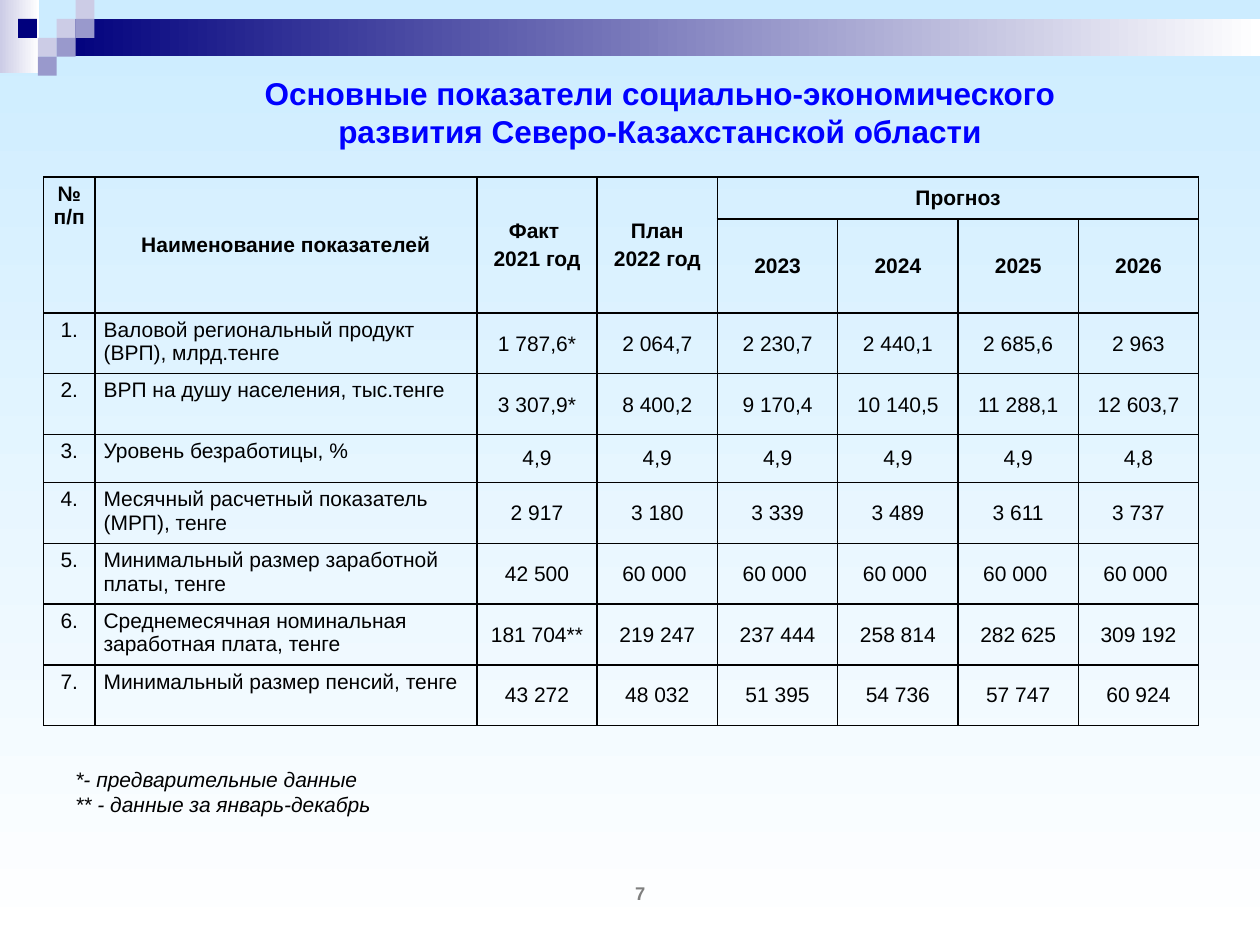
from dataclasses import dataclass
from typing import NamedTuple

from lxml.etree import SubElement
from pptx import Presentation
from pptx.dml.color import RGBColor
from pptx.enum.shapes import MSO_SHAPE
from pptx.enum.text import MSO_ANCHOR, MSO_AUTO_SIZE, PP_ALIGN
from pptx.oxml.ns import qn
from pptx.util import Pt

FONT = "Arial"
BLACK = "000000"
NAVY, LILAC, VIOLET, WHITE = "00007D", "CCCCE6", "9999CC", "FFFFFF"
COLUMNS = [29.2, 218.3] + [68.75] * 6
ROWS = [24, 53.7, 34.7, 34.7, 27.6, 34.7, 34.7, 34.7, 34.7]


class Insets(NamedTuple):
    side: float
    top: float
    bottom: float


NUMBER = Insets(5, 2.9, 2.9)
TIGHT = Insets(0.7, 0.7, 0)
FLAT = Insets(2.9, 0, 0)
WIDE = Insets(5.76, 2.9, 2.9)


class Box(NamedTuple):
    left: float
    top: float
    width: float
    height: float


@dataclass
class Block:
    box: Box
    colors: tuple[str, ...]


@dataclass
class Style:
    size: float = 12
    color: str = BLACK
    bold: bool = False
    italic: bool = False
    align: PP_ALIGN = PP_ALIGN.CENTER
    before: float = 0


@dataclass
class Header:
    text: str
    row: int
    col: int
    last_row: int
    last_col: int
    anchor: MSO_ANCHOR = MSO_ANCHOR.MIDDLE


@dataclass
class Indicator:
    name: str
    values: list[str]
    insets: Insets
    before: float = 0


def tile(left: float, top: float, color: str) -> Block:
    return Block(Box(left, top, 10.8, 10.8), (color,))


BLOCKS = [
    Block(Box(0, 0, 22.3, 41.8), (LILAC, WHITE)),
    Block(Box(32.4, 10.8, 687.6, 21.2), (NAVY, WHITE)),
    tile(32.4, 10.8, LILAC),
    tile(43.2, 0, LILAC),
    tile(43.2, 10.8, VIOLET),
    tile(21.6, 21.6, LILAC),
    tile(10.3, 10.8, NAVY),
    tile(32.4, 21.6, VIOLET),
    tile(21.6, 32.4, VIOLET),
]

HEADERS = [
    Header("№ п/п", 0, 0, 1, 0, MSO_ANCHOR.TOP),
    Header("Наименование показателей", 0, 1, 1, 1),
    Header("Факт \n2021 год", 0, 2, 1, 2),
    Header("План\n2022 год", 0, 3, 1, 3),
    Header("Прогноз", 0, 4, 0, 7),
] + [Header(str(2023 + i), 1, 4 + i, 1, 4 + i) for i in range(4)]

INDICATORS = [
    Indicator("Валовой региональный продукт (ВРП), млрд.тенге",
              ["1 787,6*", "2 064,7", "2 230,7", "2 440,1", "2 685,6", "2 963"], TIGHT),
    Indicator("ВРП на душу населения, тыс.тенге",
              ["3 307,9*", "8 400,2", "9 170,4", "10 140,5", "11 288,1", "12 603,7"], TIGHT),
    Indicator("Уровень безработицы, %", ["4,9"] * 5 + ["4,8"], FLAT),
    Indicator("Месячный расчетный показатель (МРП), тенге",
              ["2 917", "3 180", "3 339", "3 489", "3 611", "3 737"], WIDE, 2.4),
    Indicator("Минимальный размер заработной платы, тенге",
              ["42 500"] + ["60 000 "] * 5, WIDE, 2.4),
    Indicator("Среднемесячная номинальная заработная плата, тенге",
              ["181 704**", "219 247", "237 444", "258 814", "282 625", "309 192"], TIGHT),
    Indicator("Минимальный размер пенсий, тенге",
              ["43 272", "48 032", "51 395", "54 736", "57 747", "60 924"], WIDE, 2.4),
]


def rgb(color: str) -> RGBColor:
    return RGBColor.from_string(color)


def paint(fill, colors: tuple[str, ...], angle: float = 0) -> None:
    if len(colors) == 1:
        fill.solid()
        fill.fore_color.rgb = rgb(colors[0])
        return
    fill.gradient()
    fill.gradient_angle = angle
    for stop, color in zip(fill.gradient_stops, colors):
        stop.color.rgb = rgb(color)


def write(tf, text: str, style: Style) -> None:
    tf.text = text
    for p in tf.paragraphs:
        p.alignment = style.align
        p.space_before = Pt(style.before)
        for r in p.runs:
            r.font.name = FONT
            r.font.size = Pt(style.size)
            r.font.bold = style.bold
            r.font.italic = style.italic
            r.font.color.rgb = rgb(style.color)


def add_block(slide, block: Block) -> None:
    sp = slide.shapes.add_shape(MSO_SHAPE.RECTANGLE, *map(Pt, block.box))
    sp.shadow.inherit = False
    sp.line.fill.background()
    paint(sp.fill, block.colors)


def add_text(slide, box: Box, text: str, style: Style, anchor: MSO_ANCHOR) -> None:
    tf = slide.shapes.add_textbox(*map(Pt, box)).text_frame
    tf.word_wrap = True
    tf.vertical_anchor = anchor
    write(tf, text, style)


def set_title(slide, box: Box, text: str) -> None:
    sp = slide.shapes.title
    sp.left, sp.top, sp.width, sp.height = map(Pt, box)
    tf = sp.text_frame
    tf.word_wrap = True
    tf.auto_size = MSO_AUTO_SIZE.NONE
    tf.vertical_anchor = MSO_ANCHOR.MIDDLE
    write(tf, text, Style(18, "0000FF", bold=True))


def outline(cell) -> None:
    tc_pr = cell._tc.get_or_add_tcPr()
    for side in ("lnL", "lnR", "lnT", "lnB"):
        ln = SubElement(tc_pr, qn(f"a:{side}"), w=str(Pt(1)))
        SubElement(SubElement(ln, qn("a:solidFill")), qn("a:srgbClr"), val=BLACK)
    cell.fill.background()


def fill_cell(cell, text: str, style: Style, insets: Insets, anchor: MSO_ANCHOR) -> None:
    cell.margin_left = cell.margin_right = Pt(insets.side)
    cell.margin_top, cell.margin_bottom = Pt(insets.top), Pt(insets.bottom)
    cell.vertical_anchor = anchor
    write(cell.text_frame, text, style)


def add_indicators(slide, left: float, top: float) -> None:
    box = Box(left, top, sum(COLUMNS), sum(ROWS))
    table = slide.shapes.add_table(len(ROWS), len(COLUMNS), *map(Pt, box)).table
    table.first_row = table.horz_banding = False
    for column, width in zip(table.columns, COLUMNS):
        column.width = Pt(width)
    for row, height in zip(table.rows, ROWS):
        row.height = Pt(height)
    for cell in table.iter_cells():
        outline(cell)
    for h in HEADERS:
        cell = table.cell(h.row, h.col)
        if (h.row, h.col) != (h.last_row, h.last_col):
            cell.merge(table.cell(h.last_row, h.last_col))
        fill_cell(cell, h.text, Style(bold=True, before=2.4), NUMBER, h.anchor)
    for n, item in enumerate(INDICATORS, 1):
        row = n + 1
        fill_cell(table.cell(row, 0), f"{n}.", Style(before=2.4), NUMBER, MSO_ANCHOR.TOP)
        fill_cell(table.cell(row, 1), item.name, Style(align=PP_ALIGN.LEFT, before=2.4),
                  NUMBER, MSO_ANCHOR.TOP)
        for col, value in enumerate(item.values, 2):
            fill_cell(table.cell(row, col), value, Style(before=item.before),
                      item.insets, MSO_ANCHOR.MIDDLE)


def main() -> None:
    prs = Presentation()
    prs.slide_width, prs.slide_height = Pt(720), Pt(540)
    slide = prs.slides.add_slide(prs.slide_layouts[5])
    paint(slide.background.fill, ("CCECFF", WHITE), 270)
    for block in BLOCKS:
        add_block(slide, block)
    add_text(slide, Box(311.8, 504, 108, 13), "7", Style(10.5, "7F7F7F", bold=True),
             MSO_ANCHOR.MIDDLE)
    set_title(slide, Box(120.2, 40.3, 514, 47.5),
              "Основные показатели социально-экономического развития Северо-Казахстанской области")
    add_indicators(slide, 25, 101.2)
    add_text(slide, Box(36, 434.2, 492.5, 51),
             "*- предварительные данные\n** - данные за январь-декабрь",
             Style(italic=True, align=PP_ALIGN.LEFT), MSO_ANCHOR.TOP)
    prs.save("out.pptx")


if __name__ == "__main__":
    main()
